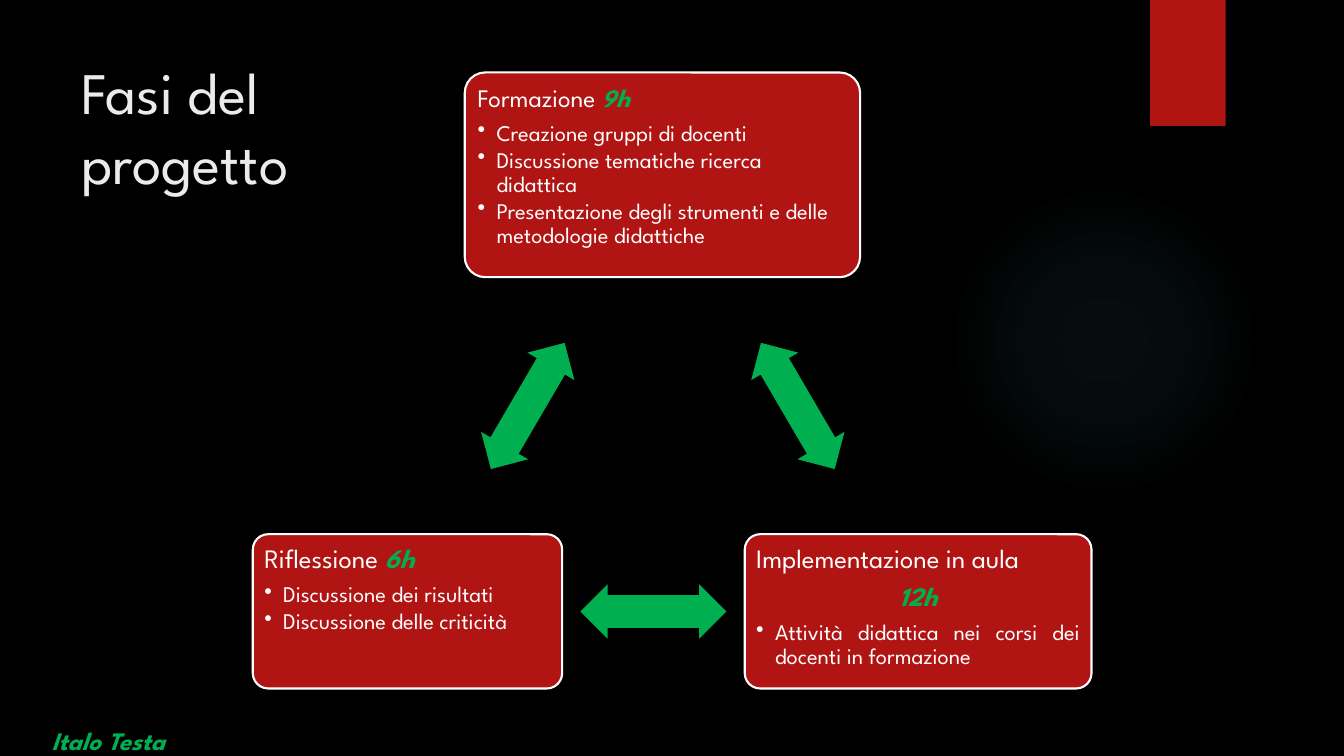
from lxml import etree
from pptx import Presentation
from pptx.dml.color import RGBColor
from pptx.enum.shapes import MSO_SHAPE
from pptx.enum.text import MSO_ANCHOR, PP_ALIGN
from pptx.oxml import parse_xml
from pptx.oxml.ns import nsdecls, qn
from pptx.util import Pt

FONT = "League Spartan"
COLORS = {
    "background": "000000",
    "red": "B01513",
    "green": "00B050",
    "white": "FFFFFF",
    "title": "EBEBEB",
    "glow": "50B9C1",
}
BULLET_INDENT = 13.5


def color(name):
    return RGBColor.from_string(COLORS[name])


def add_filled_shape(slide, kind, box, fill=None):
    shape = slide.shapes.add_shape(kind, *map(Pt, box))
    shape.shadow.inherit = False
    shape.line.fill.background()
    if fill:
        shape.fill.solid()
        shape.fill.fore_color.rgb = color(fill)
    return shape


def set_font(font, size, color_name, emphasis=False):
    font.name = FONT
    font.size = Pt(size)
    font.color.rgb = color(color_name)
    font.bold = font.italic = emphasis


def add_glow(slide, box):
    shape = add_filled_shape(slide, MSO_SHAPE.OVAL, box)
    stops = "".join(
        f'<a:gs pos="{position * 1000}"><a:srgbClr val="{COLORS["glow"]}">'
        f'<a:alpha val="{opacity * 1000}"/></a:srgbClr></a:gs>'
        for position, opacity in ((0, 7), (36, 6), (69, 0))
    )
    gradient = parse_xml(
        f'<a:gradFill {nsdecls("a")}><a:gsLst>{stops}</a:gsLst><a:path path="circle">'
        '<a:fillToRect l="50000" t="50000" r="50000" b="50000"/></a:path></a:gradFill>'
    )
    shape._element.spPr.find(qn("a:prstGeom")).addnext(gradient)


def add_ribbon(slide, box):
    shape = add_filled_shape(slide, MSO_SHAPE.RECTANGLE, box, "red")
    effects = shape._element.spPr.find(qn("a:effectLst"))
    effects.append(parse_xml(
        f'<a:outerShdw {nsdecls("a")} blurRad="38100" dist="25400" dir="5400000">'
        '<a:srgbClr val="000000"><a:alpha val="45000"/></a:srgbClr></a:outerShdw>'
    ))


def add_label(slide, box, text, size, color_name, emphasis=False, wrap=True):
    frame = slide.shapes.add_textbox(*map(Pt, box)).text_frame
    frame.word_wrap = wrap
    paragraph = frame.paragraphs[0]
    paragraph.text = text
    set_font(paragraph.font, size, color_name, emphasis)
    return paragraph


def add_bullet(paragraph):
    properties = paragraph._p.get_or_add_pPr()
    properties.set("marL", str(Pt(BULLET_INDENT)))
    properties.set("indent", str(-Pt(BULLET_INDENT)))
    etree.SubElement(properties, qn("a:buChar")).set("char", "•")


def add_phase(slide, box, heading, hours, tasks, size, hours_below=False,
              task_alignment=PP_ALIGN.LEFT):
    card = add_filled_shape(slide, MSO_SHAPE.ROUNDED_RECTANGLE, box, "red")
    card.adjustments[0] = 0.1
    card.line.color.rgb = color("white")
    card.line.width = Pt(1.5)
    frame = card.text_frame
    frame.word_wrap = True
    frame.vertical_anchor = MSO_ANCHOR.TOP
    frame.margin_left = frame.margin_right = Pt(5)
    frame.margin_top = frame.margin_bottom = Pt(5)

    def style(paragraph, alignment, space_after):
        paragraph.alignment = alignment
        paragraph.line_spacing = 0.9
        paragraph.space_after = Pt(space_after)

    # Heading, with the hours beside or below it
    paragraph = frame.paragraphs[0]
    style(paragraph, PP_ALIGN.LEFT, 6.5)
    set_font(paragraph.add_run().font, size, "white")
    paragraph.runs[0].text = heading if hours_below else heading + " "
    if hours_below:
        paragraph = frame.add_paragraph()
        style(paragraph, PP_ALIGN.CENTER, 6.5)
    run = paragraph.add_run()
    run.text = hours
    set_font(run.font, size, "green", emphasis=True)

    # Tasks
    for task in tasks:
        paragraph = frame.add_paragraph()
        paragraph.text = task
        style(paragraph, task_alignment, 2)
        add_bullet(paragraph)
        set_font(paragraph.font, 16, "white")


def add_double_arrow(slide, center_x, center_y, rotation):
    width, height = 104.4, 38.9
    box = (center_x - width / 2, center_y - height / 2, width, height)
    arrow = add_filled_shape(slide, MSO_SHAPE.LEFT_RIGHT_ARROW, box, "green")
    arrow.adjustments[0] = 0.6
    arrow.adjustments[1] = 0.5
    arrow.rotation = rotation


def main():
    presentation = Presentation()
    presentation.slide_width = Pt(960)
    presentation.slide_height = Pt(540)
    slide = presentation.slides.add_slide(presentation.slide_layouts[6])
    slide.background.fill.solid()
    slide.background.fill.fore_color.rgb = color("background")

    # Decoration and title
    add_glow(slide, (677.5, 131.8, 221.8, 221.8))
    add_ribbon(slide, (821.5, 0, 54, 90))
    add_label(slide, (51, 36, 276.5, 110), "Fasi del progetto", 42, "title")

    # Phases of the cycle
    add_phase(slide, (332, 51.8, 282.4, 146.2), "Formazione", "9h", [
        "Creazione gruppi di docenti",
        "Discussione tematiche ricerca didattica",
        "Presentazione degli strumenti e delle metodologie didattiche",
    ], 18)
    add_phase(slide, (532, 381.6, 247.7, 110.2), "Implementazione in aula", "12h", [
        "Attività didattica nei corsi dei docenti in formazione",
    ], 19, hours_below=True, task_alignment=PP_ALIGN.JUSTIFY)
    add_phase(slide, (180.6, 381.6, 221, 110.2), "Riflessione", "6h", [
        "Discussione dei risultati",
        "Discussione delle criticità",
    ], 19)

    # Arrows between the phases
    add_double_arrow(slide, 569.9, 290, 59.7)
    add_double_arrow(slide, 466.7, 436.8, 180)
    add_double_arrow(slide, 377, 290, 300.3)

    # Author
    author = add_label(slide, (29.8, 499.7, 103, 39), "Italo Testa", 18, "green",
                       emphasis=True, wrap=False)
    author.line_spacing = 1.7
    author.space_after = Pt(6)

    presentation.save("out.pptx")


if __name__ == "__main__":
    main()
